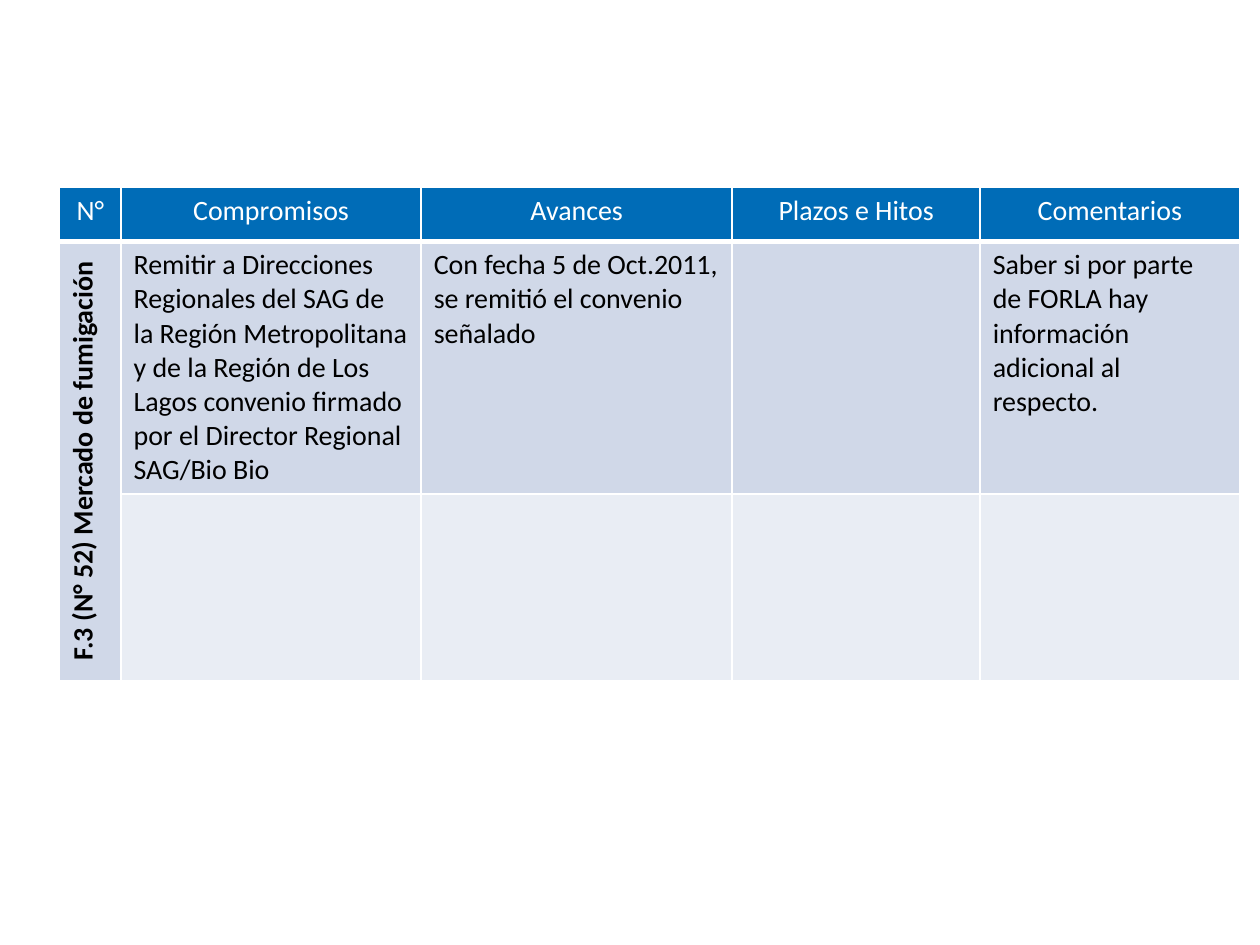
from dataclasses import dataclass

from lxml.etree import SubElement
from pptx import Presentation
from pptx.dml.color import RGBColor
from pptx.enum.text import PP_ALIGN as Align
from pptx.oxml.ns import qn
from pptx.table import _Cell as Cell
from pptx.util import Cm, Pt

WHITE = RGBColor(0xFF, 0xFF, 0xFF)
BLACK = RGBColor(0x00, 0x00, 0x00)
HEADER_BLUE = RGBColor(0x00, 0x6C, 0xB7)
BAND_DARK = RGBColor(0xD0, 0xD8, 0xE8)
BAND_LIGHT = RGBColor(0xE9, 0xED, 0xF4)

COLUMN_WIDTHS = [Cm(1.24), Cm(6.05), Cm(6.27), Cm(5), Cm(5.23)]


@dataclass(frozen=True)
class CellStyle:
    fill: RGBColor
    color: RGBColor = BLACK
    align: Align = Align.LEFT
    bold: bool = False
    bottom_border: int = 1
    direction: str = "horz"


@dataclass(frozen=True)
class TableRow:
    height: Cm
    style: CellStyle
    texts: tuple[str, ...]


HEADER = CellStyle(HEADER_BLUE, WHITE, Align.CENTER, bottom_border=3)
TOPIC = CellStyle(BAND_DARK, align=Align.CENTER, bold=True, direction="vert270")

ROWS = [
    TableRow(Cm(1.1), HEADER,
             ("N°", "Compromisos", "Avances", "Plazos e Hitos", "Comentarios")),
    TableRow(Cm(5.08), CellStyle(BAND_DARK), (
        "F.3 (N° 52) Mercado de fumigación",
        "Remitir a Direcciones Regionales del SAG de la Región Metropolitana "
        "y de la Región de Los Lagos convenio firmado por el Director Regional "
        "SAG/Bio Bio",
        "Con fecha 5 de Oct.2011, se remitió el convenio señalado",
        "",
        "Saber si por parte de FORLA hay información adicional al respecto.")),
    TableRow(Cm(3.76), CellStyle(BAND_LIGHT), ("",) * len(COLUMN_WIDTHS)),
]


def set_borders(cell: Cell, bottom_width: int) -> None:
    """Draw white lines on the four sides; they must precede the fill."""
    properties = cell._tc.get_or_add_tcPr()
    widths = {"a:lnL": 1, "a:lnR": 1, "a:lnT": 1, "a:lnB": bottom_width}
    for index, (side, width) in enumerate(widths.items()):
        line = SubElement(properties, qn(side), w=str(Pt(width)))
        SubElement(SubElement(line, qn("a:solidFill")), qn("a:srgbClr"), val=str(WHITE))
        properties.insert(index, line)


def format_cell(cell: Cell, text: str, style: CellStyle) -> None:
    cell.fill.solid()
    cell.fill.fore_color.rgb = style.fill
    set_borders(cell, style.bottom_border)
    cell._tc.get_or_add_tcPr().set("vert", style.direction)

    paragraph = cell.text_frame.paragraphs[0]
    paragraph.alignment = style.align
    paragraph.font.size = Pt(16)
    if text:
        run = paragraph.add_run()
        run.text = text
        font_format = {"name": "Calibri", "size": Pt(16), "bold": style.bold}
        for name, value in font_format.items():
            setattr(run.font, name, value)
        run.font.color.rgb = style.color


def main() -> None:
    presentation = Presentation()
    presentation.slide_width, presentation.slide_height = Cm(25.4), Cm(19.05)
    slide = presentation.slides.add_slide(presentation.slide_layouts[6])

    # Table grid
    shape = slide.shapes.add_table(
        len(ROWS), len(COLUMN_WIDTHS), Cm(1.2), Cm(3.77),
        sum(COLUMN_WIDTHS), sum(row.height for row in ROWS))
    table = shape.table
    for column, width in zip(table.columns, COLUMN_WIDTHS):
        column.width = width

    # Cell contents
    for row_index, row in enumerate(ROWS):
        table.rows[row_index].height = row.height
        for column_index, text in enumerate(row.texts):
            is_topic = column_index == 0 and row_index > 0
            style = TOPIC if is_topic else row.style
            format_cell(table.cell(row_index, column_index), text, style)

    # The topic spans both body rows
    table.cell(1, 0).merge(table.cell(2, 0))

    presentation.save("out.pptx")


if __name__ == "__main__":
    main()
